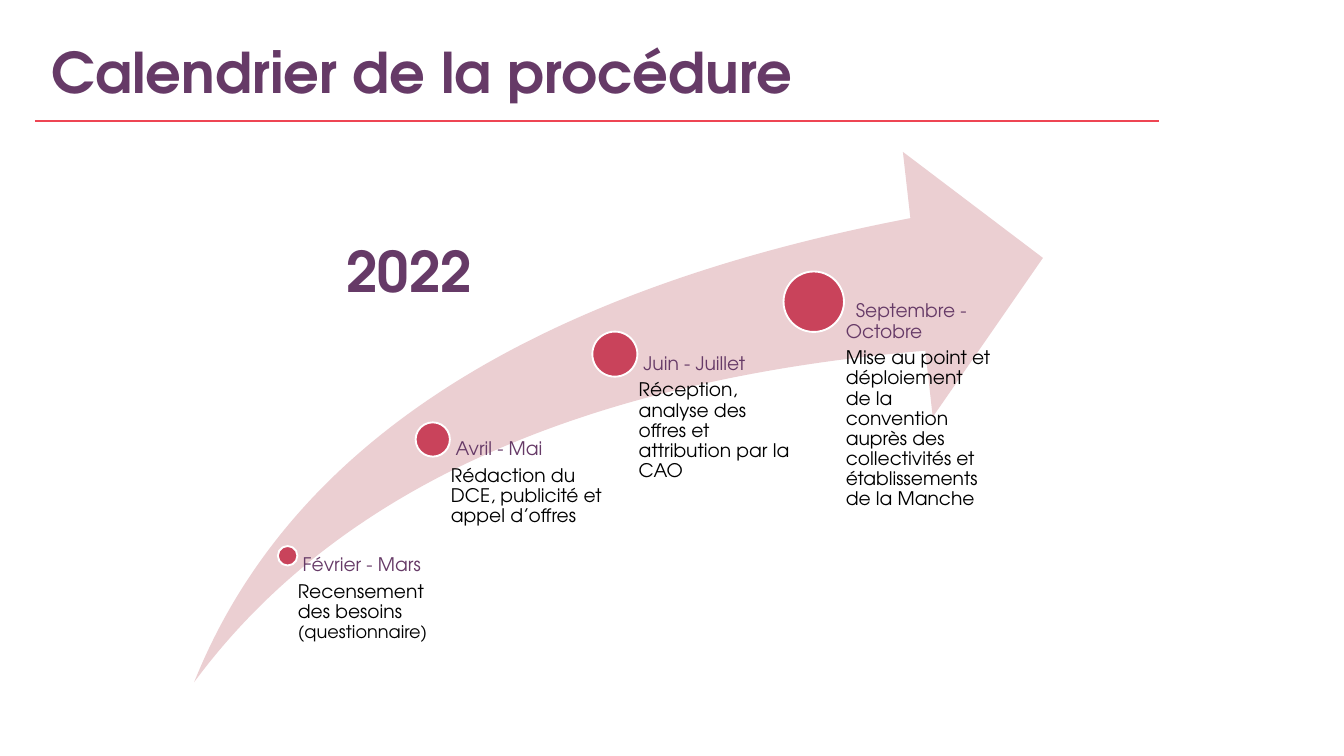
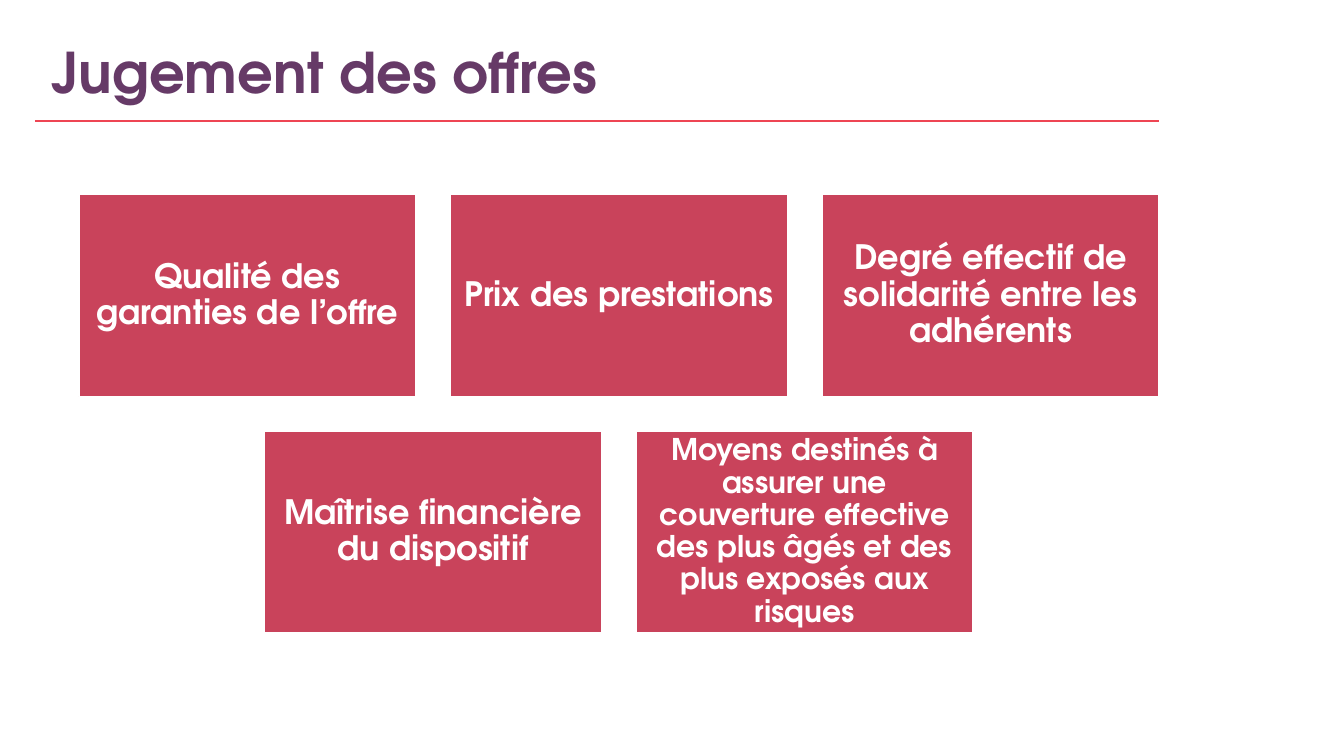
from pptx import Presentation
from pptx.dml.color import RGBColor
from pptx.enum.shapes import MSO_CONNECTOR, MSO_SHAPE
from pptx.enum.text import MSO_ANCHOR, PP_ALIGN
from pptx.util import Inches, Pt
from lxml.etree import SubElement
from pptx.oxml.ns import qn

# Shared style; the slide is a grid of 20 columns by 11.25 rows of square cells
COLUMNS, ROWS = 20, 11.25
CELL = Inches(1)
FONT = "TeX Gyre Adventor"
PURPLE, CORAL, CRIMSON = "663A67", "EE4553", "C9435B"
BLUSH, BLACK, WHITE = "EBCFD2", "000000", "FFFFFF"

# Calendar: centre column, centre row, dot diameter, label width, heading indent,
# months, runs of the step as (text, size)
SWOOSH = (2.89, 2.26, 12.63, 7.89)
STEPS = [
    (4.28, 8.27, 0.29, 2.16, 0.07, "Février - Mars",
     [("Recensement des besoins ", 20), ("(questionnaire)", 19)]),
    (6.44, 6.54, 0.51, 2.65, 0.07, "Avril - Mai",
     [("Rédaction du DCE, publicité et appel d’offres", 20)]),
    (9.15, 5.27, 0.67, 2.65, 0.07, "Juin - Juillet",
     [("Réception, analyse des offres et attribution par la CAO", 20)]),
    (12.11, 4.49, 0.9, 2.65, 0.15, "Septembre - Octobre",
     [("Mise au point et déploiement de la convention auprès des "
       "collectivités et établissements de la Manche", 20)]),
]

# Criteria: rows of (text, size), each row centred on the same axis
CRITERIA = [
    [("Qualité des garanties de l’offre", 36),
     ("Prix des prestations", 36),
     ("Degré effectif de solidarité entre les adhérents", 36)],
    [("Maîtrise financière du dispositif", 36),
     ("Moyens destinés à assurer une couverture effective des plus âgés "
      "et des plus exposés aux risques", 32)],
]
CARD_WIDTH, CARD_HEIGHT, CARD_GAP = 5.02, 3.01, 0.51
CARDS_AXIS, CARDS_TOP = 9.21, 2.89


def cells(*counts):
    return [int(count * CELL) for count in counts]


def color(hex_value):
    return RGBColor.from_string(hex_value)


def style_font(font, size, hex_value, bold=False):
    font.name, font.size, font.bold = FONT, Pt(size), bold
    font.color.rgb = color(hex_value)


def set_insets(frame, left, top, right, bottom):
    frame.word_wrap = True
    (frame.margin_left, frame.margin_top,
     frame.margin_right, frame.margin_bottom) = cells(left, top, right, bottom)


def tighten(paragraph, size):
    paragraph.line_spacing = 0.9
    paragraph.space_after = Pt(0.35 * size)


def add_figure(slide, preset, box, fill, outline=None):
    figure = slide.shapes.add_shape(preset, *cells(*box))
    figure.shadow.inherit = False
    figure.fill.solid()
    figure.fill.fore_color.rgb = color(fill)
    if outline:
        figure.line.color.rgb = color(outline)
        figure.line.width = Pt(2)
    else:
        figure.line.fill.background()
    return figure


def add_headline(slide, text, box, align=PP_ALIGN.LEFT):
    frame = slide.shapes.add_textbox(*cells(*box)).text_frame
    set_insets(frame, 0.1, 0.05, 0.1, 0.05)
    frame.vertical_anchor = MSO_ANCHOR.MIDDLE
    headline = frame.paragraphs[0]
    headline.text, headline.alignment = text, align
    style_font(headline.font, 60, PURPLE, bold=True)


def add_titled_slide(deck, title):
    slide = deck.slides.add_slide(deck.slide_layouts[6])
    add_headline(slide, title, (0.67, 0.48, 15.9, 1.15))
    rule = slide.shapes.add_connector(MSO_CONNECTOR.STRAIGHT, *cells(0.52, 1.8, 17.25, 1.8))
    rule.line.color.rgb = color(CORAL)
    rule.line.width = Pt(3)
    SubElement(rule._element.spPr, qn("a:effectLst"))
    return slide


def add_step(slide, x, y, diameter, width, indent, months, task):
    # Dot centred on the arrow
    radius = diameter / 2
    add_figure(slide, MSO_SHAPE.OVAL, (x - radius, y - radius, diameter, diameter),
               CRIMSON, WHITE)

    # Label from the dot's centre down to the foot of the arrow
    foot = SWOOSH[1] + SWOOSH[3]
    frame = slide.shapes.add_textbox(*cells(x, y, width, foot - y)).text_frame
    set_insets(frame, 0.53 * diameter, 0, 0, 0)
    heading, description = frame.paragraphs[0], frame.add_paragraph()
    heading.text = months
    heading._p.get_or_add_pPr().set("indent", str(*cells(indent)))
    style_font(heading.font, 20, PURPLE)
    for text, size in task:
        run = description.add_run()
        run.text = text
        style_font(run.font, size, BLACK)
    for paragraph in frame.paragraphs:
        tighten(paragraph, 20)


def add_card(slide, left, top, text, size):
    card = add_figure(slide, MSO_SHAPE.RECTANGLE, (left, top, CARD_WIDTH, CARD_HEIGHT),
                      CRIMSON, WHITE)
    frame = card.text_frame
    set_insets(frame, *[size / 240] * 4)
    frame.vertical_anchor = MSO_ANCHOR.MIDDLE
    criterion = frame.paragraphs[0]
    criterion.text, criterion.alignment = text, PP_ALIGN.CENTER
    tighten(criterion, size)
    style_font(criterion.font, size, WHITE, bold=True)


def build_calendar(deck):
    slide = add_titled_slide(deck, "Calendrier de la procédure")
    swoosh = add_figure(slide, MSO_SHAPE.SWOOSH_ARROW, SWOOSH, BLUSH)
    swoosh.adjustments[0] = swoosh.adjustments[1] = 0.25
    for step in STEPS:
        add_step(slide, *step)
    add_headline(slide, "2022", (5.03, 3.45, 2.12, 1.15), PP_ALIGN.CENTER)


def build_criteria(deck):
    slide = add_titled_slide(deck, "Jugement des offres")
    for row, criteria in enumerate(CRITERIA):
        row_width = len(criteria) * (CARD_WIDTH + CARD_GAP) - CARD_GAP
        top = CARDS_TOP + row * (CARD_HEIGHT + CARD_GAP)
        for column, (text, size) in enumerate(criteria):
            left = CARDS_AXIS - row_width / 2 + column * (CARD_WIDTH + CARD_GAP)
            add_card(slide, left, top, text, size)


def main():
    deck = Presentation()
    deck.slide_width, deck.slide_height = cells(COLUMNS, ROWS)
    build_calendar(deck)
    build_criteria(deck)
    deck.save("out.pptx")


if __name__ == "__main__":
    main()
